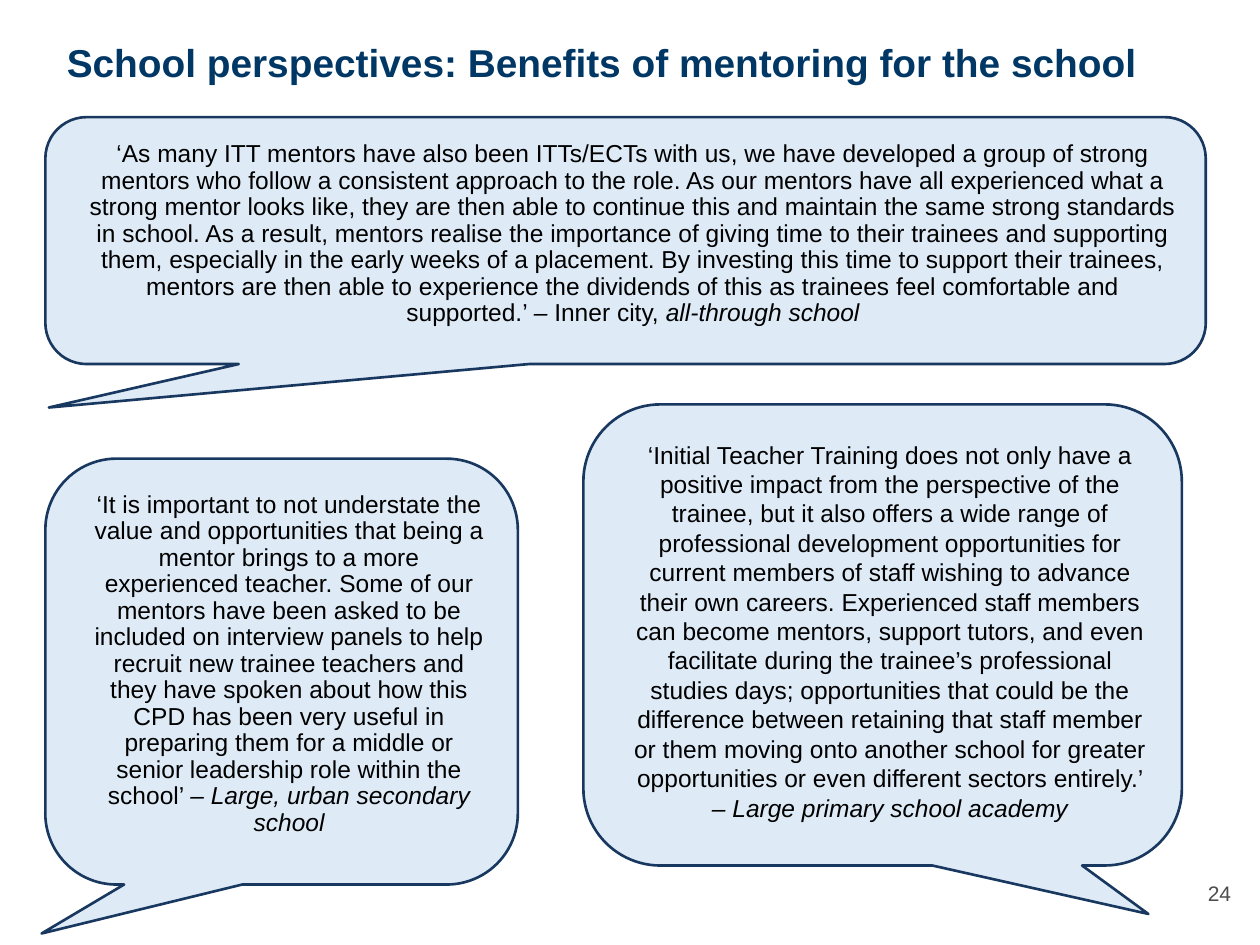
from dataclasses import dataclass

from pptx import Presentation
from pptx.dml.color import RGBColor
from pptx.enum.shapes import MSO_SHAPE
from pptx.enum.text import MSO_ANCHOR, MSO_AUTO_SIZE, PP_ALIGN
from pptx.util import Inches, Pt

CALLOUT = MSO_SHAPE.ROUNDED_RECTANGULAR_CALLOUT
TOP, MIDDLE = MSO_ANCHOR.TOP, MSO_ANCHOR.MIDDLE
LEFT, CENTER, RIGHT = PP_ALIGN.LEFT, PP_ALIGN.CENTER, PP_ALIGN.RIGHT
NO_AUTOFIT = MSO_AUTO_SIZE.NONE
TITLE_ONLY = 5


@dataclass(frozen=True)
class Theme:
    font: str = "Arial"
    title_size: float = 22.2
    quote_size: float = 14
    number_size: float = 12
    title_color: str = "003764"
    quote_color: str = "000000"
    number_color: str = "4D4D4D"
    bubble_fill: str = "DEEBF7"
    bubble_line: str = "183860"
    line_width: float = 1.5
    corner: float = 0.167
    inset: float = 0.1
    indent: float = 0.12
    tight: float = 0.9


class SlideBuilder:
    def __init__(self, slide, theme):
        self.slide = slide
        self.theme = theme

    def _write(self, frame, runs, size, color, align, anchor=TOP, spacing=1.0, bold=False):
        """Fill a frame with one paragraph of (text, italic) runs."""
        frame.word_wrap = True
        frame.auto_size = NO_AUTOFIT
        frame.vertical_anchor = anchor
        frame.margin_left = frame.margin_right = Inches(self.theme.inset)
        frame.margin_top = frame.margin_bottom = Inches(self.theme.inset)
        paragraph = frame.paragraphs[0]
        paragraph.alignment = align
        paragraph.line_spacing = spacing
        paragraph.space_before = paragraph.space_after = Pt(0)
        for text, italic in runs:
            run = paragraph.add_run()
            run.text = text
            run.font.name = self.theme.font
            run.font.size = Pt(size)
            run.font.bold = bold
            run.font.italic = italic
            run.font.color.rgb = RGBColor.from_string(color)
        return paragraph

    def title(self, text, left, top, width, height):
        title = self.slide.shapes.title
        title.left, title.top = Inches(left), Inches(top)
        title.width, title.height = Inches(width), Inches(height)
        self._write(title.text_frame, [(text, False)], self.theme.title_size,
                    self.theme.title_color, LEFT, spacing=self.theme.tight, bold=True)

    def speech_bubble(self, box, tail, runs, spacing):
        theme = self.theme
        bubble = self.slide.shapes.add_shape(CALLOUT, *map(Inches, box))
        for index, value in enumerate((*tail, theme.corner)):
            bubble.adjustments[index] = value
        bubble.shadow.inherit = False
        bubble.fill.solid()
        bubble.fill.fore_color.rgb = RGBColor.from_string(theme.bubble_fill)
        bubble.line.color.rgb = RGBColor.from_string(theme.bubble_line)
        bubble.line.width = Pt(theme.line_width)
        paragraph = self._write(bubble.text_frame, runs, theme.quote_size,
                                theme.quote_color, CENTER, spacing=spacing)
        properties = paragraph._p.get_or_add_pPr()
        properties.set("marL", str(Inches(theme.indent)))
        properties.set("indent", "0")

    def page_number(self, number, left, top, width, height):
        box = self.slide.shapes.add_textbox(*map(Inches, (left, top, width, height)))
        self._write(box.text_frame, [(number, False)], self.theme.number_size,
                    self.theme.number_color, RIGHT, MIDDLE)


def main():
    deck = Presentation()
    deck.slide_width, deck.slide_height = Inches(10), Inches(7.5)
    theme = Theme()
    builder = SlideBuilder(deck.slides.add_slide(deck.slide_layouts[TITLE_ONLY]), theme)

    # Heading and page number
    builder.title("School perspectives: Benefits of mentoring for the school",
                  0.43, 0.25, 9.32, 0.84)
    builder.page_number("24", 9.27, 6.8, 0.6, 0.57)

    # Secondary school quote
    builder.speech_bubble((0.36, 3.64, 3.75, 3.38), (-0.508, 0.615), [
        ("‘It is important to not understate the value and opportunities that being a "
         "mentor brings to a more experienced teacher. Some of our mentors have been "
         "asked to be included on interview panels to help recruit new trainee teachers "
         "and they have spoken about how this CPD has been very useful in preparing them "
         "for a middle or senior leadership role within the school’ ", False),
        ("– Large, urban secondary school", True),
    ], theme.tight)

    # Primary school quote
    builder.speech_bubble((4.63, 3.21, 4.75, 3.66), (0.444, 0.605), [
        ("‘Initial Teacher Training does not only have a positive impact from the "
         "perspective of the trainee, but it also offers a wide range of professional "
         "development opportunities for current members of staff wishing to advance "
         "their own careers. Experienced staff members can become mentors, support "
         "tutors, and even facilitate during the trainee’s professional studies days; "
         "opportunities that could be the difference between retaining that staff member "
         "or them moving onto another school for greater opportunities or even different "
         "sectors entirely.’ ", False),
        ("– Large primary school academy", True),
    ], 1.0)

    # All-through school quote
    builder.speech_bubble((0.36, 0.93, 9.21, 1.96), (-0.497, 0.676), [
        ("‘As many ITT mentors have also been ITTs/ECTs with us, we have developed a "
         "group of strong mentors who follow a consistent approach to the role. As our "
         "mentors have all experienced what a strong mentor looks like, they are then "
         "able to continue this and maintain the same strong standards in school. As a "
         "result, mentors realise the importance of giving time to their trainees and "
         "supporting them, especially in the early weeks of a placement. By investing "
         "this time to support their trainees, mentors are then able to experience the "
         "dividends of this as trainees feel comfortable and supported.’ ", False),
        ("–", True),
        (" Inner city, ", False),
        ("all-through school", True),
    ], theme.tight)

    deck.save("out.pptx")


if __name__ == "__main__":
    main()
